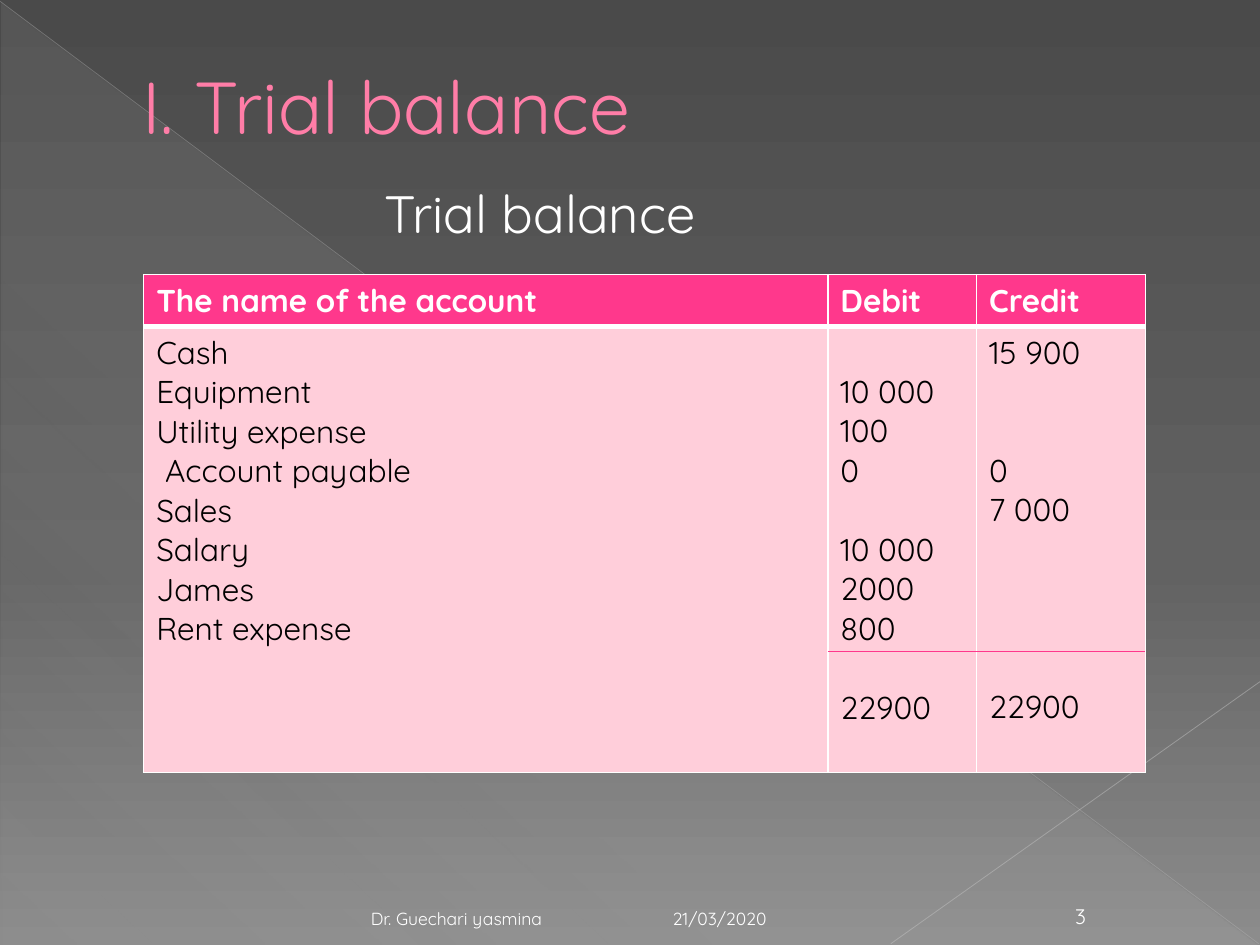
from lxml.etree import SubElement
from pptx import Presentation
from pptx.dml.color import RGBColor
from pptx.enum.shapes import MSO_CONNECTOR, MSO_SHAPE
from pptx.enum.text import MSO_ANCHOR, PP_ALIGN
from pptx.oxml.ns import qn
from pptx.util import Inches, Pt

FONT = "Quicksand"
WHITE = RGBColor(0xFF, 0xFF, 0xFF)
BLACK = RGBColor(0, 0, 0)
ROSE = RGBColor(0xFF, 0x7D, 0xA7)
PINK = RGBColor(0xFF, 0x38, 0x8C)
BLUSH = RGBColor(0xFF, 0xCE, 0xDA)
MIST = RGBColor(0xD2, 0xD2, 0xD2)
SILVER = RGBColor(0xBF, 0xBF, 0xBF)
PALE = RGBColor(0xC6, 0xC6, 0xC6)
DARK = RGBColor(0x4A, 0x4A, 0x4A)
SLATE = RGBColor(0x62, 0x62, 0x62)
GRAY = RGBColor(0x8C, 0x8C, 0x8C)

COLS, ROWS = 100, 75
UNIT = Inches(10) // COLS
LINE = 22.5

HEADS = ["The name of the account", "Debit", "Credit"]
WIDTHS = [54.3, 11.8, 13.4]
NAMES = ["Cash", "Equipment", "Utility expense", "Account payable",
         "Sales", "Salary", "James", "Rent expense"]
DEBITS = {1: "10 000", 2: "100", 3: "0", 5: "10 000",
          6: "2000", 7: "800", 9: "22900"}
CREDITS = {0: "15 900", 3: "0", 4: "7 000", 9: "22900"}


def grid(*nums):
    return [round(n * UNIT) for n in nums]


def write(para, text, size=18, color=WHITE, bold=False,
          align=PP_ALIGN.LEFT, left=0, before=0):
    para.alignment = align
    if left:
        para._p.get_or_add_pPr().set("marL", str(round(left * UNIT)))
    if before:
        para.space_before = Pt(before)
    run = para.add_run()
    run.text = text
    font = run.font
    font.name, font.size, font.bold = FONT, Pt(size), bold
    font.color.rgb = color


def label(slide, box, text, anchor=MSO_ANCHOR.TOP, right=1, **form):
    frame = slide.shapes.add_textbox(*grid(*box)).text_frame
    frame.word_wrap = True
    frame.vertical_anchor = anchor
    frame.margin_right = grid(right)[0]
    write(frame.paragraphs[0], text, **form)


def tint(node, color, alpha=100):
    tone = SubElement(node, qn("a:srgbClr"), val=str(color))
    if alpha < 100:
        SubElement(tone, qn("a:alpha"), val=str(alpha * 1000))


def blend(fill, root, stops, angle):
    fill.gradient()
    grad = next(root.iter(qn("a:gradFill")))
    for child in list(grad):
        grad.remove(child)
    group = SubElement(grad, qn("a:gsLst"))
    for spot, color, alpha in stops:
        stop = SubElement(group, qn("a:gs"), pos=str(spot * 1000))
        tint(stop, color, alpha)
    SubElement(grad, qn("a:lin"), ang=str(angle * 60000), scaled="0")


def rule(slide, ends, color, width, alpha=100):
    line = slide.shapes.add_connector(MSO_CONNECTOR.STRAIGHT, *grid(*ends))
    line.line.color.rgb = color
    line.line.width = Pt(width)
    if alpha < 100:
        tone = next(line._element.spPr.iter(qn("a:srgbClr")))
        SubElement(tone, qn("a:alpha"), val=str(alpha * 1000))
    SubElement(line._element.spPr, qn("a:effectLst"))


def backdrop(slide):
    blend(slide.background.fill, slide._element,
          [(0, DARK, 100), (60, SLATE, 100), (100, GRAY, 100)], 90)
    wedge = slide.shapes.add_shape(
        MSO_SHAPE.RIGHT_TRIANGLE, *grid(0.1, 0.2, 99.8, 74.8))
    wedge.shadow.inherit = False
    wedge.line.fill.background()
    blend(wedge.fill, wedge._element,
          [(0, MIST, 10), (70, MIST, 8), (100, MIST, 1)], 133)
    rule(slide, (0, 0.1, 99.9, 74.9), SILVER, 0.39, 35)
    rule(slide, (COLS, 54.1, 70.7, 74.9), PALE, 0.47, 45)


def heading(slide, box):
    title = slide.shapes.title
    slide.shapes._spTree.append(title._element)
    title.left, title.top, title.width, title.height = grid(*box)
    title.text_frame.vertical_anchor = MSO_ANCHOR.MIDDLE
    write(title.text_frame.paragraphs[0], "I. Trial balance",
          size=42, color=ROSE, left=5.3)


def paint(cell, color, top=1, base=1):
    props = cell._tc.get_or_add_tcPr()
    for side, width in zip("LRTB", (1, 1, top, base)):
        edge = SubElement(props, qn("a:ln" + side), w=str(Pt(width)))
        tint(SubElement(edge, qn("a:solidFill")), WHITE)
    cell.fill.solid()
    cell.fill.fore_color.rgb = color


def stack(cell, items):
    first = min(items)
    cell.margin_top = Inches(0.05) + Pt(first * LINE)
    last = first - 1
    for row, text in items.items():
        para = (cell.text_frame.paragraphs[0] if row == first
                else cell.text_frame.add_paragraph())
        write(para, text, color=BLACK, before=(row - last - 1) * LINE,
              left=0.7 if text == "Account payable" else 0)
        last = row


def ledger(slide, box):
    table = slide.shapes.add_table(2, len(HEADS), *grid(*box)).table
    for row, high in zip(table.rows, (4.1, box[3] - 4.1)):
        row.height = grid(high)[0]
    lists = [dict(enumerate(NAMES)), DEBITS, CREDITS]
    for col, (head, wide, items) in enumerate(zip(HEADS, WIDTHS, lists)):
        table.columns[col].width = grid(wide)[0]
        top, body = table.cell(0, col), table.cell(1, col)
        paint(top, PINK, base=3)
        paint(body, BLUSH, top=3)
        write(top.text_frame.paragraphs[0], head, bold=True)
        stack(body, items)
    edge = box[0] + box[2]
    rule(slide, (edge - sum(WIDTHS[1:]), 51.7, edge, 51.7), PINK, 0.75)


def footer(slide, top, high):
    base = MSO_ANCHOR.BOTTOM
    label(slide, (52.4, top, 23.3, high), "21/03/2020", base, size=10)
    label(slide, (83, top, 5.5, high), "3", base, size=12,
          align=PP_ALIGN.CENTER)
    label(slide, (5, top, 46.6, high), "Dr. Guechari yasmina", base,
          right=8.6, size=10, align=PP_ALIGN.RIGHT)


def main():
    deck = Presentation()
    deck.slide_width, deck.slide_height = grid(COLS, ROWS)
    slide = deck.slides.add_slide(deck.slide_layouts[5])
    backdrop(slide)
    heading(slide, (5, 2.9, 90, 10.9))
    label(slide, (5, 13.9, 90, 56.7), "Trial balance", size=30, left=24.5)
    ledger(slide, (11.4, 21.8, 79.5, 39.5))
    footer(slide, 70.9, 3.3)
    deck.save("out.pptx")


if __name__ == "__main__":
    main()
